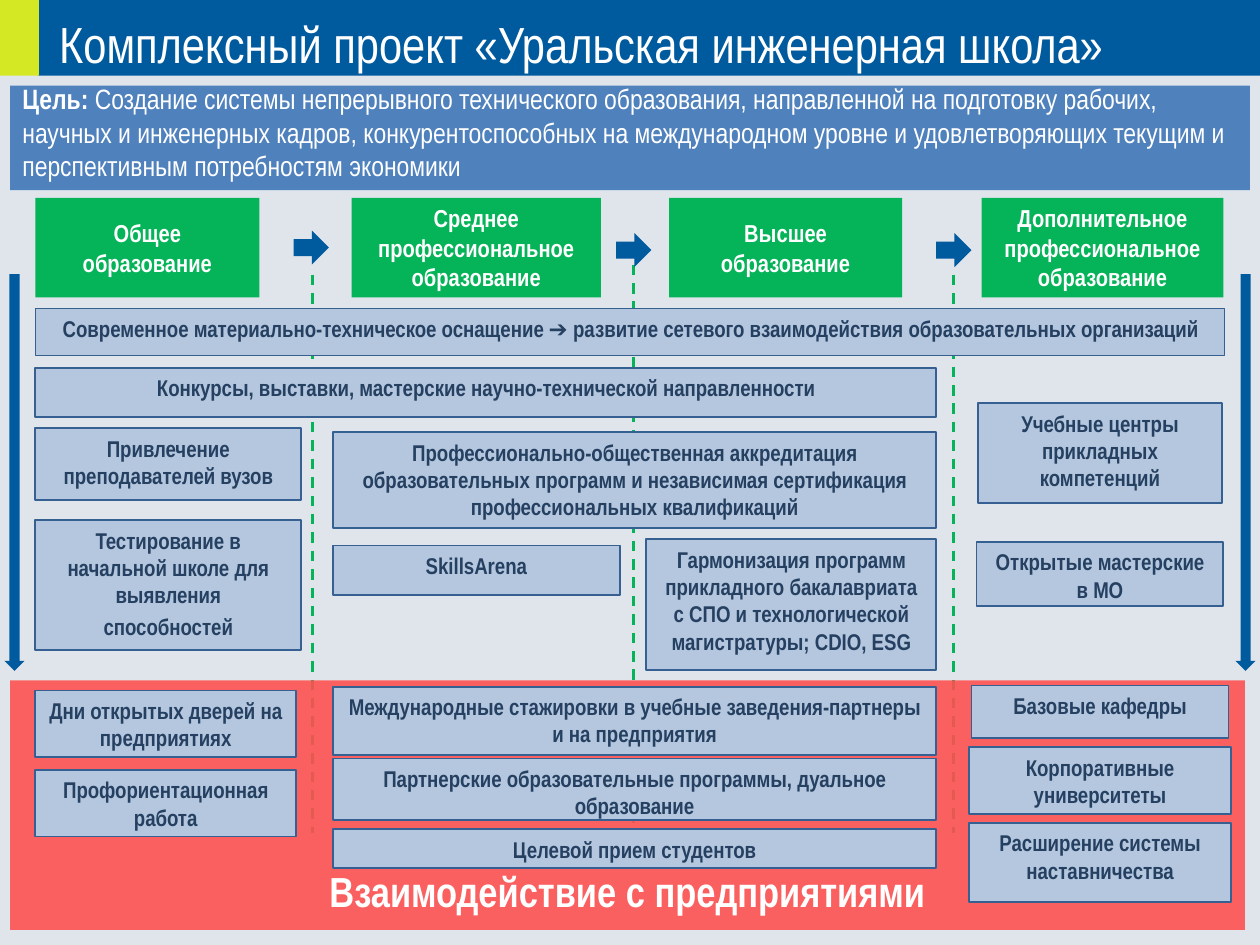
from dataclasses import dataclass

from lxml import etree
from pptx import Presentation
from pptx.dml.color import RGBColor
from pptx.enum.dml import MSO_LINE
from pptx.enum.shapes import MSO_CONNECTOR, MSO_SHAPE
from pptx.enum.text import MSO_ANCHOR, MSO_AUTO_SIZE, PP_ALIGN
from pptx.oxml.ns import qn
from pptx.util import Inches, Pt

RECT, ARROW = MSO_SHAPE.RECTANGLE, MSO_SHAPE.RIGHT_ARROW
STRAIGHT, DASH = MSO_CONNECTOR.STRAIGHT, MSO_LINE.DASH
TOP, MIDDLE, BOTTOM = MSO_ANCHOR.TOP, MSO_ANCHOR.MIDDLE, MSO_ANCHOR.BOTTOM
LEFT, CENTER = PP_ALIGN.LEFT, PP_ALIGN.CENTER


@dataclass(frozen=True)
class Theme:
    font: str = "Arial Narrow"
    back: str = "E0E5EC"
    blue: str = "005A9E"
    lime: str = "D5E824"
    goal: str = "4F81BD"
    green: str = "05B358"
    red: str = "FF5050"
    card: str = "B4C7DE"
    edge: str = "376092"
    ink: str = "254061"
    white: str = "FFFFFF"
    title_size: int = 29
    band_size: int = 24
    goal_size: int = 16
    level_size: int = 14
    card_size: int = 13


T = Theme()
WIDTH, HEIGHT = 10, 7.5

# Grid columns: left and width
COLUMNS = {
    "all": (0.28, 9.44),
    "first three": (0.28, 7.15),
    "general": (0.28, 2.11),
    "visits": (0.28, 2.07),
    "middle": (2.64, 4.79),
    "college": (2.64, 2.28),
    "higher": (5.13, 2.3),
    "extra": (7.69, 2.08),
}

# Education levels: left, width, lines
LEVELS = [
    (0.28, 1.78, ["Общее", "образование"]),
    (2.79, 1.98, ["Среднее", "профессиональное", "образование"]),
    (5.31, 1.85, ["Высшее", "образование"]),
    (7.79, 1.92, ["Дополнительное", "профессиональное", "образование"]),
]

# Measures: column, top, height, inset from the column's sides, paragraphs
MEASURES = [
    ("all", 2.45, 0.37, 0, ["Современное материально-техническое оснащение ➔ развитие "
                            "сетевого взаимодействия образовательных организаций"]),
    ("first three", 2.92, 0.39, 0,
     ["Конкурсы, выставки, мастерские научно-технической направленности"]),
    ("general", 3.4, 0.57, 0, ["Привлечение преподавателей вузов"]),
    ("general", 4.13, 1.03, 0,
     ["Тестирование в начальной школе для выявления", "способностей"]),
    ("visits", 5.48, 0.53, 0, ["Дни открытых дверей на предприятиях"]),
    ("visits", 6.11, 0.53, 0, ["Профориентационная работа"]),
    ("middle", 3.43, 0.76, 0,
     ["Профессионально-общественная аккредитация образовательных программ "
      "и независимая сертификация профессиональных квалификаций"]),
    ("college", 4.33, 0.39, 0, ["SkillsArena"]),
    ("higher", 4.28, 1.04, 0,
     ["Гармонизация программ прикладного бакалавриата с СПО "
      "и технологической магистратуры; CDIO, ESG"]),
    ("middle", 5.45, 0.54, 0,
     ["Международные стажировки в учебные заведения-партнеры и на предприятия"]),
    ("middle", 6.02, 0.49, 0,
     ["Партнерские образовательные программы, дуальное образование"]),
    ("middle", 6.58, 0.31, 0, ["Целевой прием студентов"]),
    ("extra", 3.2, 0.79, 0.07, ["Учебные центры прикладных компетенций"]),
    ("extra", 4.3, 0.51, 0.06, ["Открытые мастерские в МО"]),
    ("extra", 5.44, 0.42, 0.02, ["Базовые кафедры"]),
    ("extra", 5.93, 0.53, 0, ["Корпоративные университеты"]),
    ("extra", 6.53, 0.63, 0, ["Расширение системы наставничества"]),
]


def rgb(color):
    return RGBColor.from_string(color)


def write(shape, paragraphs, size, color=T.white, bold=False, align=CENTER,
          anchor=MIDDLE, before=0):
    """Each paragraph is a string or a list of (text, bold) runs."""
    tf = shape.text_frame
    tf.word_wrap = True
    tf.auto_size = MSO_AUTO_SIZE.NONE
    tf.vertical_anchor = anchor
    for i, runs in enumerate(paragraphs):
        p = tf.add_paragraph() if i else tf.paragraphs[0]
        p.alignment = align
        p.space_before = Pt(before)
        for text, heavy in [(runs, bold)] if isinstance(runs, str) else runs:
            r = p.add_run()
            r.text = text
            r.font.name, r.font.size, r.font.bold = T.font, Pt(size), heavy
            r.font.color.rgb = rgb(color)
    return tf


def block(s, x, y, w, h, fill, kind=RECT, line=None, width=1, opacity=None):
    sp = s.shapes.add_shape(kind, Inches(x), Inches(y), Inches(w), Inches(h))
    sp.shadow.inherit = False
    sp.fill.solid()
    sp.fill.fore_color.rgb = rgb(fill)
    if line:
        sp.line.color.rgb = rgb(line)
        sp.line.width = Pt(width)
    else:
        sp.line.fill.background()
    if opacity:
        color = sp.element.spPr.find(qn("a:solidFill"))[0]
        etree.SubElement(color, qn("a:alpha")).set("val", str(opacity * 1000))
    return sp


def divider(s, x, top, bottom):
    line = s.shapes.add_connector(STRAIGHT, Inches(x), Inches(top), Inches(x), Inches(bottom))
    line.line.color.rgb = rgb(T.green)
    line.line.width = Pt(1.5)
    line.line.dash_style = DASH
    etree.SubElement(line.element.spPr, qn("a:effectLst"))


def header(s):
    block(s, 0.3, 0, WIDTH - 0.3, 0.6, T.blue)
    block(s, 0, 0, 0.31, 0.6, T.lime)
    title = s.shapes.title
    title.left, title.top, title.width, title.height = map(Inches, (0.37, 0.05, 9.51, 0.63))
    write(title, ["Комплексный проект «Уральская инженерная школа»"],
          T.title_size, align=LEFT, anchor=TOP)
    # Bring the title in front of the header bar
    title.element.getparent().append(title.element)


def goal(s):
    block(s, 0.08, 0.68, 9.84, 0.83, T.goal)
    box = s.shapes.add_textbox(Inches(0.08), Inches(0.6), Inches(9.8), Inches(0.91))
    write(box, [[("Цель: ", True),
                 ("Создание системы непрерывного технического образования, направленной "
                  "на подготовку рабочих, научных и инженерных кадров, конкурентоспособных "
                  "на международном уровне и удовлетворяющих текущим и перспективным "
                  "потребностям экономики", False)]],
          T.goal_size, align=LEFT, anchor=TOP)


def main():
    prs = Presentation()
    prs.slide_width, prs.slide_height = Inches(WIDTH), Inches(HEIGHT)
    s = prs.slides.add_slide(prs.slide_layouts[5])
    s.background.fill.solid()
    s.background.fill.fore_color.rgb = rgb(T.back)

    # Dividers between the levels
    for x, top, bottom in [(5.03, 2.1, 6.53), (2.48, 2.18, 6.61), (7.57, 2.18, 6.61)]:
        divider(s, x, top, bottom)

    header(s)
    goal(s)

    # Enterprise band
    band = block(s, 0.08, 5.4, 9.8, 1.98, T.red, opacity=89)
    tf = write(band, ["Взаимодействие с предприятиями"], T.band_size, bold=True, anchor=BOTTOM)
    tf.margin_bottom = Inches(0.11)

    # Levels and the arrows between them
    for x, w, lines in LEVELS:
        write(block(s, x, 1.57, w, 0.79, T.green), lines, T.level_size, bold=True)
    for x, y in [(2.33, 1.83), (4.89, 1.85), (7.43, 1.85)]:
        block(s, x, y, 0.28, 0.27, T.blue, kind=ARROW)

    # Measures
    for column, top, h, inset, paragraphs in MEASURES:
        x, w = COLUMNS[column]
        card = block(s, x + inset, top, w - 2 * inset, h, T.card, line=T.edge,
                     width=0.75 if column == "all" else 1)
        write(card, paragraphs, T.card_size, color=T.ink, bold=True, anchor=TOP,
              before=0.2 * T.card_size)

    # Long downward arrows at both sides
    for x in (-1.46, 8.31):
        block(s, x, 3.67, 3.15, 0.16, T.blue, kind=ARROW).rotation = 90

    prs.save("out.pptx")


if __name__ == "__main__":
    main()
